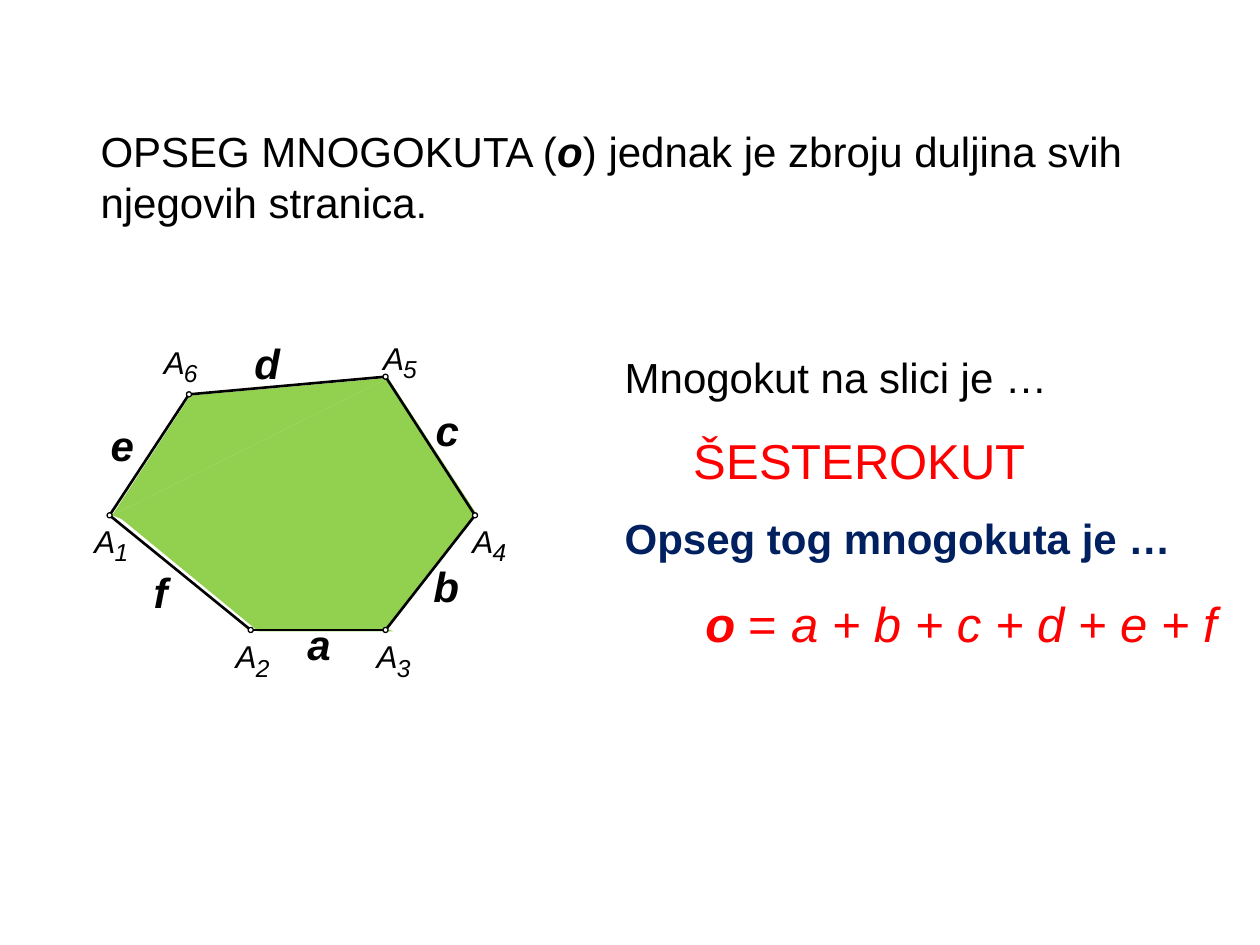
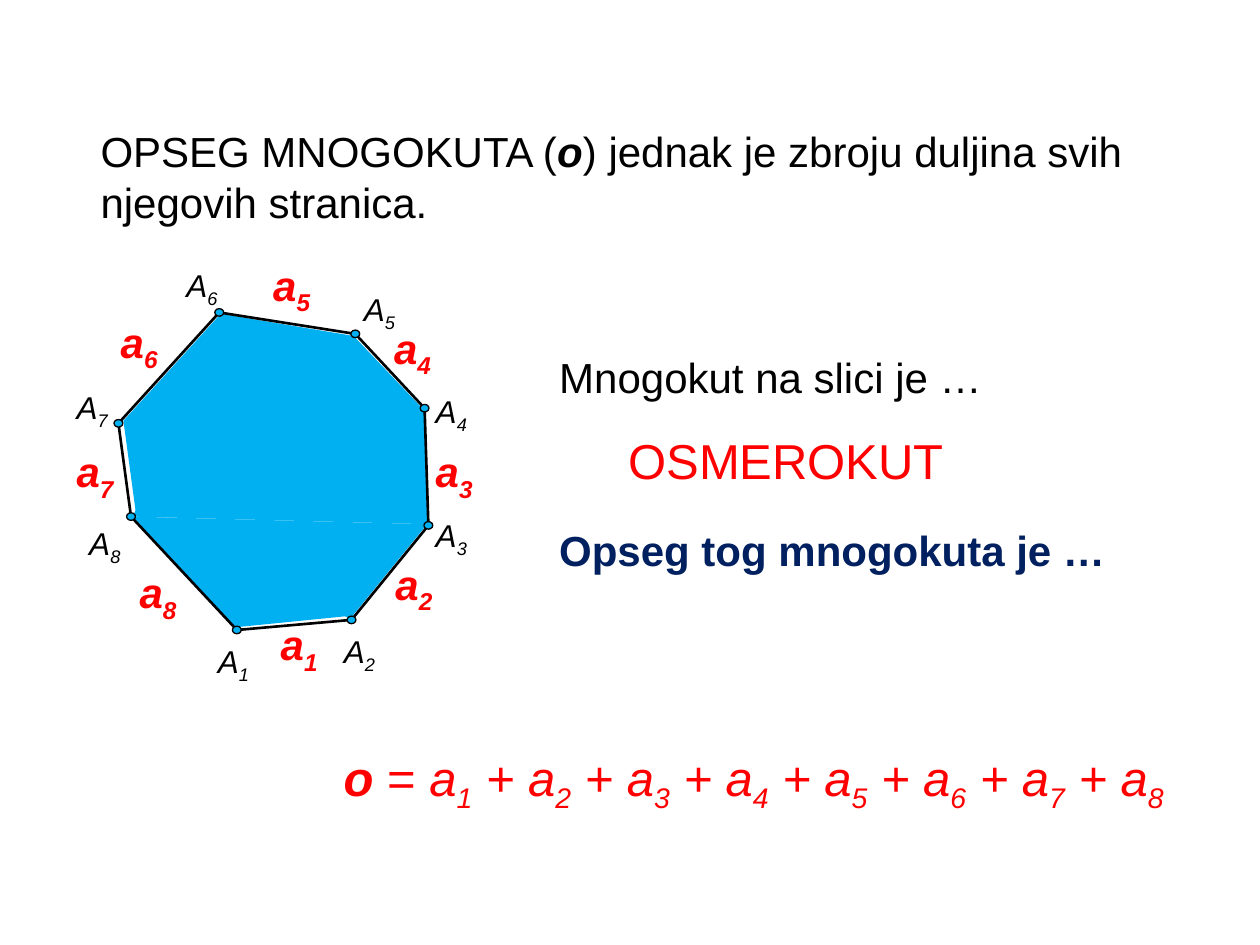
from pptx import Presentation
from pptx import util as u
from pptx.dml.color import RGBColor
from pptx.enum import shapes, text
from pptx.oxml.xmlchemy import OxmlElement

# The slide is a grid of 10 columns by 7.5 rows; every length counts cells.
CELL = u.Inches(1)
COLS, ROWS = 10, 7.5
FONT = "Arial"
COLORS = {"ink": "000000", "navy": "002060", "red": "FF0000",
          "green": "92D050", "blue": "00B0F0", "white": "FFFFFF"}


def cells(*counts):
    return [u.Emu(round(n * CELL)) for n in counts]


def rgb(name):
    return RGBColor.from_string(COLORS[name])


# Text
def add_text(slide, at, runs, size=24, color="ink", bold=False, italic=False,
             tight=False):
    """runs is a string or a list of (words, changed format) pairs."""
    tf = slide.shapes.add_textbox(*cells(*at)).text_frame
    tf.word_wrap = not tight
    tf.auto_size = text.MSO_AUTO_SIZE.SHAPE_TO_FIT_TEXT
    if tight:
        tf.margin_left = tf.margin_right = tf.margin_top = tf.margin_bottom = 0
    p = tf.paragraphs[0]
    for words, change in [(runs, {})] if isinstance(runs, str) else runs:
        r = p.add_run()
        r.text = words
        r.font.name, r.font.size = FONT, u.Pt(size)
        r.font.color.rgb = rgb(color)
        r.font.bold = change.get("bold", bold)
        r.font.italic = change.get("italic", italic)
        if change.get("sub"):
            r._r.get_or_add_rPr().set("baseline", "-25000")


def indexed(letter, i):
    return [(letter, {}), (str(i), {"sub": True})]


# Parts of a polygon
def add_patch(slide, corners, color):
    first, *rest = [cells(*c) for c in corners]
    builder = slide.shapes.build_freeform(*first, scale=1.0)
    builder.add_line_segments(rest, close=True)
    sp = builder.convert_to_shape()
    sp.shadow.inherit = False
    sp.fill.solid()
    sp.fill.fore_color.rgb = rgb(color)
    sp.line.fill.background()


def add_side(slide, start, end):
    line = slide.shapes.add_connector(shapes.MSO_CONNECTOR.STRAIGHT,
                                      *cells(*start, *end))
    line.line.color.rgb = rgb("ink")
    line.line.width = u.Pt(1.5)
    line._element.spPr.append(OxmlElement("a:effectLst"))


def add_dot(slide, center, width, height, color):
    x, y = center
    sp = slide.shapes.add_shape(
        shapes.MSO_SHAPE.OVAL,
        *cells(x - width / 2, y - height / 2, width, height))
    sp.shadow.inherit = False
    sp.fill.solid()
    sp.fill.fore_color.rgb = rgb(color)
    sp.line.color.rgb = rgb("ink")
    sp.line.width = u.Pt(0)


def add_polygon(slide, vertices, patches, color, dot):
    for corners in patches:
        add_patch(slide, corners, color)
    for start, end in zip(vertices, vertices[1:] + vertices[:1]):
        add_side(slide, start, end)
    for vertex in vertices:
        add_dot(slide, vertex, *dot)


# Wording shared by both slides
def add_statements(slide, left, name, perimeter_top):
    add_text(slide, (0.7, 0.95, 9.22, 0.91), [
        ("OPSEG MNOGOKUTA (", {}), ("o", {"bold": True, "italic": True}),
        (") jednak je zbroju duljina svih njegovih stranica.", {})])
    add_text(slide, (left, 2.74, 6.17, 0.5), "Mnogokut na slici je …")
    add_text(slide, (left, perimeter_top, 4.8, 0.5), "Opseg tog mnogokuta je …",
             color="navy", bold=True)
    add_text(slide, (left + 0.55, 3.37, 5.53, 0.57), name, size=28, color="red")


def add_formula(slide, at, terms):
    add_text(slide, at, [("o ", {"bold": True}), ("= ", {"italic": False})] + terms,
             size=28, color="red", italic=True)


def hexagon_slide(slide):
    vertices = [(0.87, 4.09), (1.99, 5), (3.06, 5), (3.77, 4.09),
                (3.06, 2.99), (1.5, 3.13)]
    patches = [[(0.89, 4.09), (3.08, 3), (1.51, 3.14)],
               [(0.89, 4.09), (3.79, 4.09), (3.08, 3)],
               [(0.87, 4.08), (3.07, 5), (3.77, 4.08)],
               [(0.93, 4.09), (2.05, 5.01), (3.12, 5.01)]]
    add_polygon(slide, vertices, patches, "green", (0.04, 0.04, "white"))

    vertex_labels = [(0.75, 4.14), (1.87, 5.06), (2.99, 5.06), (3.75, 4.14),
                     (3.04, 2.69), (1.3, 2.72)]
    for i, (x, y) in enumerate(vertex_labels, 1):
        add_text(slide, (x, y, 0.17, 0.3), "A", size=18, italic=True, tight=True)
        add_text(slide, (x + 0.16, y + 0.12, 0.11, 0.24), str(i), size=14,
                 italic=True, tight=True)

    side_labels = {"a": (2.34, 4.86), "b": (3.34, 4.4), "c": (3.36, 3.16),
                   "d": (1.92, 2.63), "e": (0.78, 3.28), "f": (1.12, 4.45)}
    for side, place in side_labels.items():
        add_text(slide, (*place, 0.48, 0.5), side, bold=True, italic=True)

    add_statements(slide, 4.86, "ŠESTEROKUT", 4.02)
    add_formula(slide, (5.5, 4.66, 5.28, 0.57), [(" + ".join(side_labels), {})])


def octagon_slide(slide):
    vertices = [(1.88, 5), (2.79, 4.92), (3.4, 4.17), (3.37, 3.24),
                (2.82, 2.65), (1.74, 2.48), (0.94, 3.36), (1.04, 4.1)]
    patches = [[(0.98, 3.34), (1.78, 2.46), (1.08, 4.08)],
               [(3.4, 4.16), (1.05, 4.1), (3.37, 3.24)],
               [(2.78, 4.91), (1.04, 4.1), (3.39, 4.16)],
               [(1.86, 4.98), (2.76, 4.89), (1.03, 4.08)],
               [(1.75, 2.49), (2.83, 2.67), (1.05, 4.11)],
               [(2.81, 2.67), (3.36, 3.25), (1.04, 4.11)]]
    add_polygon(slide, vertices, patches, "blue", (0.07, 0.06, "blue"))

    vertex_labels = [(1.63, 5.05), (2.63, 4.97), (3.36, 4.05), (3.36, 3.06),
                     (2.79, 2.25), (1.38, 2.06), (0.51, 3.03), (0.61, 4.11)]
    side_labels = [(2.13, 4.86), (3.04, 4.38), (3.36, 3.49), (3.03, 2.51),
                   (2.07, 2.01), (0.86, 2.46), (0.51, 3.49), (1.01, 4.45)]
    for i, (vertex, side) in enumerate(zip(vertex_labels, side_labels), 1):
        add_text(slide, (*vertex, 0.51, 0.4), indexed("A", i), size=18, italic=True)
        add_text(slide, (*side, 0.6, 0.5), indexed("a", i), color="red",
                 bold=True, italic=True)

    add_statements(slide, 4.34, "OSMEROKUT", 4.11)
    terms = indexed("a", 1)
    for i in range(2, len(vertices) + 1):
        terms += indexed(" + a", i)
    add_formula(slide, (2.63, 5.88, 7.37, 0.57), terms)


def main():
    prs = Presentation()
    prs.slide_width, prs.slide_height = cells(COLS, ROWS)
    for build in (hexagon_slide, octagon_slide):
        build(prs.slides.add_slide(prs.slide_layouts[6]))
    prs.save("out.pptx")


if __name__ == "__main__":
    main()
